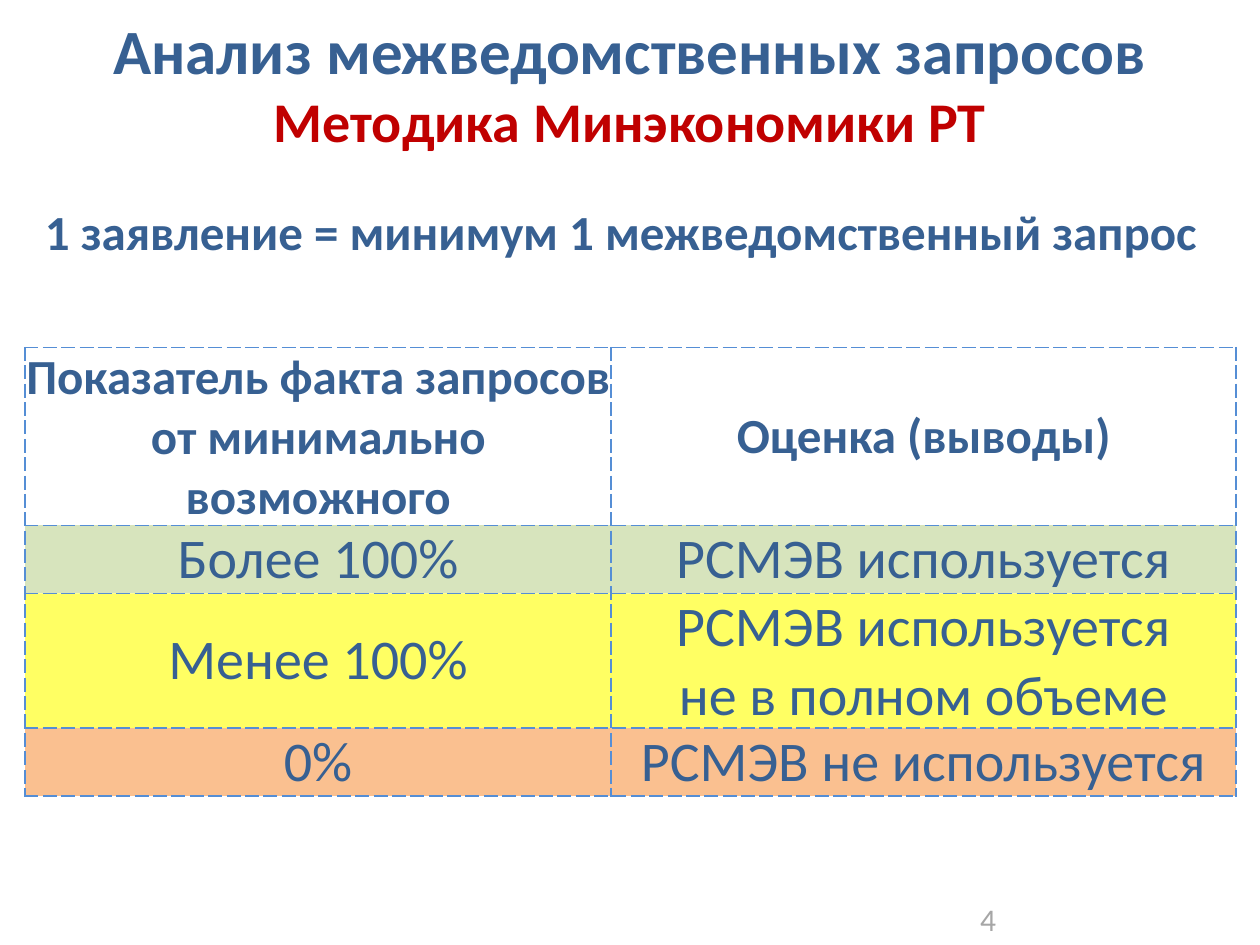
from lxml import etree
from pptx import Presentation
from pptx.dml.color import RGBColor
from pptx.enum.text import MSO_ANCHOR, PP_ALIGN
from pptx.oxml.ns import qn
from pptx.util import Inches, Pt

CENTER = PP_ALIGN.CENTER
LEFT = PP_ALIGN.LEFT
MIDDLE = MSO_ANCHOR.MIDDLE
TITLE_ONLY = 5
COLORS = {
    "blue": "376092", "red": "C00000", "grey": "A6A6A6", "border": "558ED5",
    "green": "D7E4BD", "yellow": "FFFF00", "orange": "FAC090",
}
HEADING = {"size": Pt(28), "bold": True}
BODY = {"size": Pt(32), "bold": False}
COLUMN_WIDTHS = (4.65, 4.96)
ROWS = [
    (1.41, None, None, HEADING,
     ("Показатель факта запросов от минимально возможного", "Оценка (выводы)")),
    (0.54, "green", None, BODY, ("Более 100%", "РСМЭВ используется")),
    (1.06, "yellow", 61, BODY,
     ("Менее 100%", "РСМЭВ используется\nне в полном объеме")),
    (0.54, "orange", None, BODY, ("0%", "РСМЭВ не используется")),
]


def format_font(font, color, values):
    """Apply the typeface, a palette colour and other font values."""
    font.name = "Calibri"
    font.color.rgb = RGBColor.from_string(COLORS[color])
    for name, value in values.items():
        setattr(font, name, value)


def write_text(frame, text, color, values, alignment=CENTER):
    """Fill a text frame with one formatted paragraph per line."""
    frame.text = text
    for paragraph in frame.paragraphs:
        paragraph.alignment = alignment
        for run in paragraph.runs:
            format_font(run.font, color, values)


def place(shape, left, top, width, height):
    """Set the position and size of a shape in inches."""
    box = {"left": left, "top": top, "width": width, "height": height}
    for name, value in box.items():
        setattr(shape, name, Inches(value))


def add_title(slide):
    """Format the title placeholder as a heading with a subheading."""
    title = slide.shapes.title
    place(title, 0, 0.03, 10, 1.25)
    title.text_frame.vertical_anchor = MIDDLE
    paragraph = title.text_frame.paragraphs[0]
    paragraph.alignment = CENTER
    heading = paragraph.add_run()
    heading.text = "Анализ межведомственных запросов"
    format_font(heading.font, "blue", {"size": Pt(36), "bold": True})
    paragraph.add_line_break()
    subheading = paragraph.add_run()
    subheading.text = "Методика Минэкономики РТ"
    format_font(subheading.font, "red", {"size": Pt(32), "bold": True})


def add_text(slide, box, text, color, values, alignment=CENTER):
    """Add a wrapping text box."""
    shape = slide.shapes.add_textbox(*map(Inches, box))
    shape.text_frame.word_wrap = True
    write_text(shape.text_frame, text, color, values, alignment)


def add_borders(cell):
    """Draw dashed lines on all four sides of a cell."""
    properties = cell._tc.get_or_add_tcPr()
    for side in ("lnL", "lnR", "lnT", "lnB"):
        line = etree.SubElement(properties, qn(f"a:{side}"), w=str(Pt(1)))
        fill = etree.SubElement(line, qn("a:solidFill"))
        etree.SubElement(fill, qn("a:srgbClr"), val=COLORS["border"])
        etree.SubElement(line, qn("a:prstDash"), val="sysDash")


def fill_cell(cell, color, opacity):
    """Give a cell a solid fill with optional opacity, or no fill."""
    if color is None:
        cell.fill.background()
        return
    cell.fill.solid()
    cell.fill.fore_color.rgb = RGBColor.from_string(COLORS[color])
    if opacity is not None:
        tint = cell._tc.tcPr.find(f"{qn('a:solidFill')}/{qn('a:srgbClr')}")
        etree.SubElement(tint, qn("a:alpha"), val=str(opacity * 1000))


def add_rating_table(slide):
    """Add the table of request indicators and their ratings."""
    height = sum(row[0] for row in ROWS)
    frame = slide.shapes.add_table(
        len(ROWS), len(COLUMN_WIDTHS), Inches(0.2), Inches(2.76),
        Inches(sum(COLUMN_WIDTHS)), Inches(height))
    table = frame.table
    for column, width in zip(table.columns, COLUMN_WIDTHS):
        column.width = Inches(width)
    for row, (height, color, opacity, font, texts) in zip(table.rows, ROWS):
        row.height = Inches(height)
        for cell, text in zip(row.cells, texts):
            for side in ("left", "right", "top", "bottom"):
                setattr(cell, f"margin_{side}", 0)
            cell.vertical_anchor = MIDDLE
            add_borders(cell)
            fill_cell(cell, color, opacity)
            write_text(cell.text_frame, text, "blue", font)


def main():
    """Build and save the slide."""
    presentation = Presentation()
    presentation.slide_width = Inches(10)
    presentation.slide_height = Inches(7.5)
    slide = presentation.slides.add_slide(presentation.slide_layouts[TITLE_ONLY])
    add_text(slide, (7.68, 7.09, 0.42, 0.4), "4", "grey", {"size": Pt(18)}, LEFT)
    add_title(slide)
    add_rating_table(slide)
    add_text(slide, (0.2, 1.55, 9.45, 0.57),
             "1 заявление = минимум 1 межведомственный запрос", "blue", HEADING)
    presentation.save("out.pptx")


if __name__ == "__main__":
    main()
